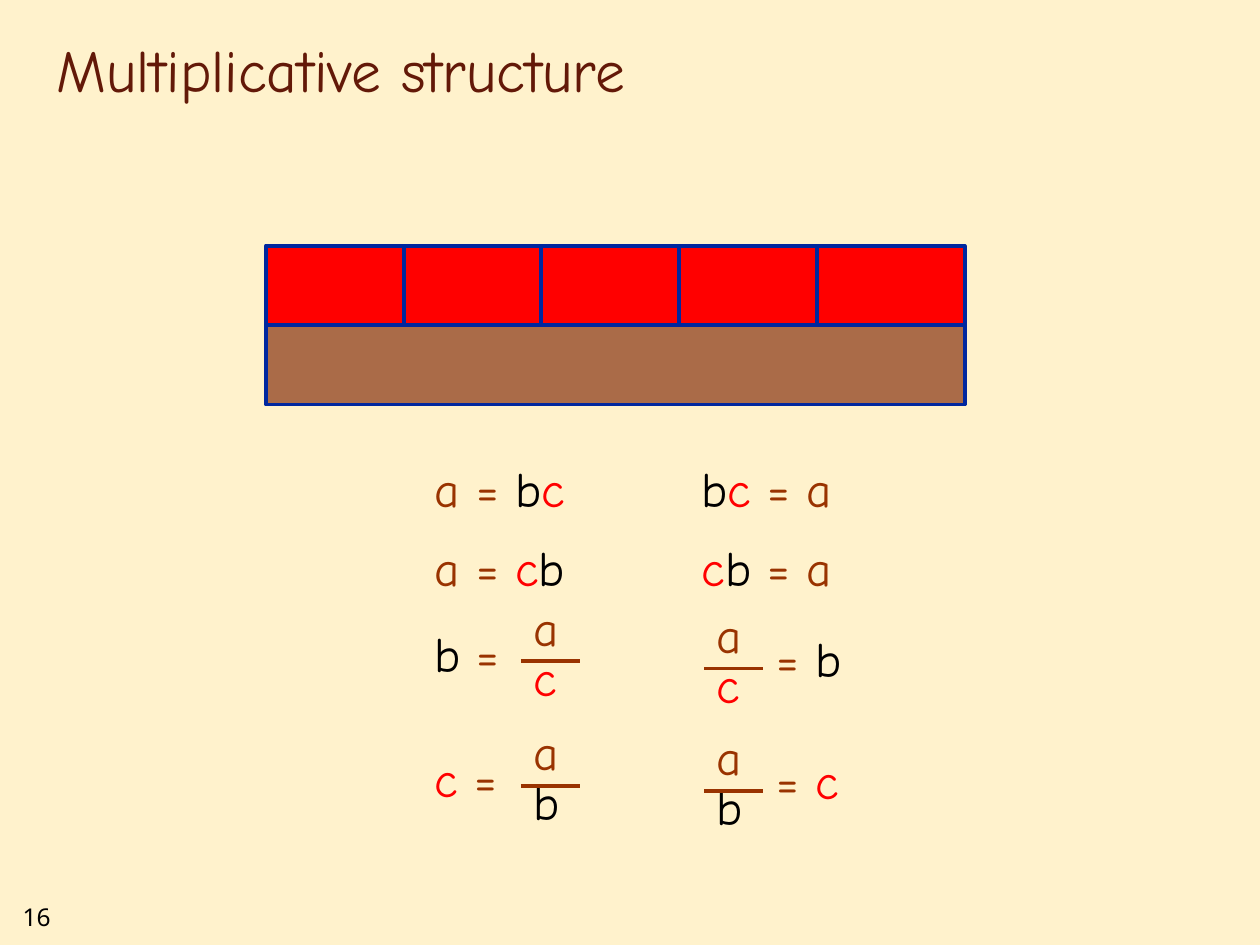
"""Build the slide on the multiplicative structure of rods and fractions."""
import dataclasses
import itertools

import lxml.etree
import pptx
import pptx.dml.color
import pptx.enum.shapes
import pptx.enum.text
import pptx.oxml.ns
import pptx.util

Pt = pptx.util.Pt
BROWN, BLACK, RED, BLUE = "993300", "000000", "FF0000", "00279F"
LETTER_COLOURS = {"b": BLACK, "c": RED}
TEXT_HEIGHT = 41
EQUATION_WIDTH = 102
FRACTION_WIDTH = 34
ROD_LEFT, ROD_TOP, ROD_HEIGHT = 152, 140.4, 45.4
UNIT_COUNT, UNIT_STEP, UNIT_WIDTH, LAST_WIDTH = 5, 78.7, 80.6, 84.4


@dataclasses.dataclass
class Label:
    text: str
    left: float
    top: float
    width: float = EQUATION_WIDTH


@dataclasses.dataclass
class FractionEquation:
    side: Label
    denominator: str
    left: float
    top: float


PRODUCTS = [
    Label("a = bc", 241.2, 258.5),
    Label("a = cb", 241.2, 303.8),
    Label("bc = a", 393.8, 258.5),
    Label("cb = a", 393.8, 303.8),
]
FRACTIONS = [
    FractionEquation(Label("b =", 241.2, 352.8), "c", 297.6, 337.7),
    FractionEquation(Label("c =", 241.2, 424.1), "b", 297.6, 409),
    FractionEquation(Label("= b", 436.5, 355.7), "c", 402.3, 342),
    FractionEquation(Label("= c", 436.5, 425.5), "b", 402.3, 411.8),
]


def colour(code: str) -> pptx.dml.color.RGBColor:
    return pptx.dml.color.RGBColor.from_string(code)


def format_span(span, size: float, font: str, code: str) -> None:
    span.font.size = Pt(size)
    span.font.name = font
    span.font.color.rgb = colour(code)


def add_box(shapes, label: Label, height: float = TEXT_HEIGHT):
    box = shapes.add_textbox(Pt(label.left), Pt(label.top), Pt(label.width), Pt(height))
    box.text_frame.word_wrap = True
    return box


def add_plain(shapes, label: Label, height: float, size: float, font: str, code: str):
    box = add_box(shapes, label, height)
    box.text_frame.text = label.text
    format_span(box.text_frame.paragraphs[0].runs[0], size, font, code)
    return box


def add_equation(shapes, label: Label) -> None:
    para = add_box(shapes, label).text_frame.paragraphs[0]
    groups = itertools.groupby(label.text, lambda sign: LETTER_COLOURS.get(sign, BROWN))
    for code, signs in groups:
        span = para.add_run()
        span.text = "".join(signs)
        format_span(span, 28, "Comic Neue", code)


def add_fraction(shapes, equation: FractionEquation) -> None:
    group = shapes.add_group_shape().shapes
    left, top = equation.left, equation.top
    add_equation(group, equation.side)
    add_equation(group, Label("a", left, top, FRACTION_WIDTH))
    add_equation(group, Label(equation.denominator, left, top + 28.6, FRACTION_WIDTH))
    bar = group.add_connector(
        pptx.enum.shapes.MSO_CONNECTOR.STRAIGHT,
        Pt(left), Pt(top + 40), Pt(left + FRACTION_WIDTH), Pt(top + 40),
    )
    bar.line.color.rgb = colour(BROWN)
    bar.line.width = Pt(2.25)
    properties = bar.element.find(pptx.oxml.ns.qn("p:spPr"))
    lxml.etree.SubElement(properties, pptx.oxml.ns.qn("a:effectLst"))


def add_rod(shapes, left: float, top: float, width: float, fill: str) -> None:
    rod = shapes.add_shape(
        pptx.enum.shapes.MSO_SHAPE.RECTANGLE, Pt(left), Pt(top), Pt(width), Pt(ROD_HEIGHT)
    )
    rod.shadow.inherit = False
    rod.fill.solid()
    rod.fill.fore_color.rgb = colour(fill)
    rod.line.color.rgb = colour(BLUE)
    rod.line.width = Pt(2.25)


def main() -> None:
    deck = pptx.Presentation()
    deck.slide_width, deck.slide_height = Pt(720), Pt(540)
    page = deck.slides.add_slide(deck.slide_layouts[6])
    page.background.fill.solid()
    page.background.fill.fore_color.rgb = colour("FFF2CC")
    shapes = page.shapes

    add_plain(shapes, Label("16", 5.8, 511.9, 54), 24.5, 14, "Noto Sans", BLACK)
    title = add_plain(
        shapes, Label("Multiplicative structure", 25.2, 3.6, 617.8),
        59.8, 34, "Comic Neue", "631908",
    )
    title.text_frame.vertical_anchor = pptx.enum.text.MSO_ANCHOR.BOTTOM

    whole_width = (UNIT_COUNT - 1) * UNIT_STEP + LAST_WIDTH
    add_rod(shapes, ROD_LEFT, ROD_TOP + ROD_HEIGHT, whole_width, "AA6B48")
    for index in range(UNIT_COUNT):
        width = LAST_WIDTH if index == UNIT_COUNT - 1 else UNIT_WIDTH
        add_rod(shapes, ROD_LEFT + index * UNIT_STEP, ROD_TOP, width, RED)

    for product in PRODUCTS:
        add_equation(shapes, product)
    for equation in FRACTIONS:
        add_fraction(shapes, equation)
    deck.save("out.pptx")


if __name__ == "__main__":
    main()
